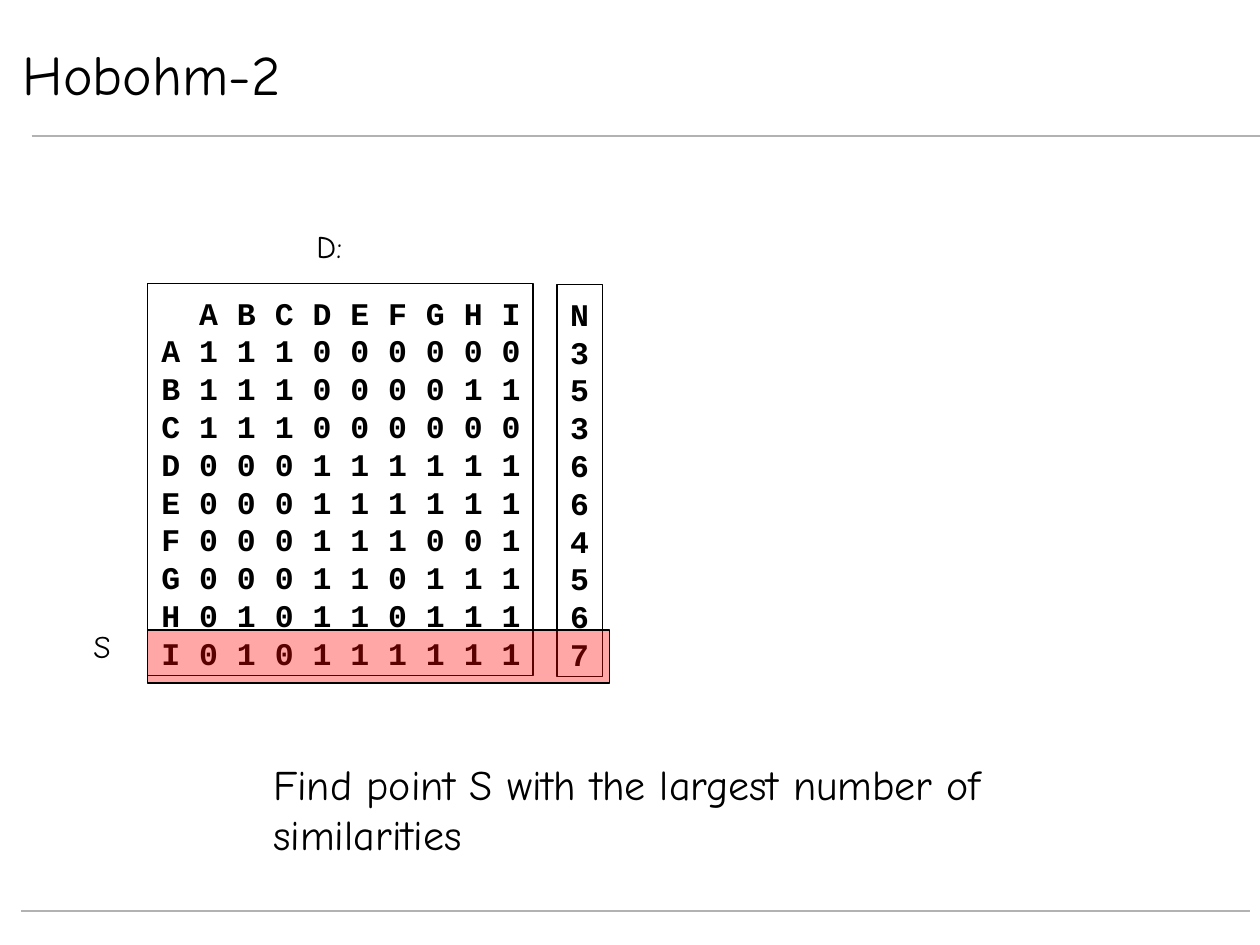
from lxml import etree
from pptx import Presentation
from pptx.dml.color import RGBColor
from pptx.enum.shapes import MSO_CONNECTOR, MSO_SHAPE
from pptx.enum.text import MSO_ANCHOR, MSO_AUTO_SIZE, PP_ALIGN
from pptx.oxml.ns import qn
from pptx.util import Inches, Pt

LINE, RECT = MSO_CONNECTOR.STRAIGHT, MSO_SHAPE.RECTANGLE
TOP, MIDDLE = MSO_ANCHOR.TOP, MSO_ANCHOR.MIDDLE
LEFT, CENTER, RIGHT = PP_ALIGN.LEFT, PP_ALIGN.CENTER, PP_ALIGN.RIGHT
NO_FIT = MSO_AUTO_SIZE.NONE
BLACK = RGBColor(0, 0, 0)
WHITE = RGBColor(0xFF, 0xFF, 0xFF)
GRAY = RGBColor(0xB2, 0xB2, 0xB2)
RED = RGBColor(0xFF, 0, 0)
SANS = {"name": "Comic Neue", "bold": False}
MONO = {"name": "Courier New", "bold": True, "size": Pt(18)}
ROW = 0.3

NAMES = "ABCDEFGHI"
SIMILAR = ["111000000", "111000011", "111000000", "000111111", "000111111",
           "000111001", "000110111", "010110111", "010111111"]


def write(sp, lines, style, align=LEFT, anchor=TOP, wrap=False, pitch=None):
    tf = sp.text_frame
    frame = {"word_wrap": wrap, "auto_size": NO_FIT, "vertical_anchor": anchor}
    for key, value in frame.items():
        setattr(tf, key, value)
    for i, line in enumerate(lines):
        p = tf.paragraphs[0] if i == 0 else tf.add_paragraph()
        p.alignment = align
        if pitch:
            p.line_spacing = pitch
        r = p.add_run()
        r.text = line
        for key, value in style.items():
            setattr(r.font, key, value)
        r.font.color.rgb = BLACK


def add_label(s, box, text, size, align=CENTER, wrap=False):
    sp = s.shapes.add_textbox(*map(Inches, box))
    write(sp, [text], {**SANS, "size": Pt(size)}, align, wrap=wrap)


def add_frame(s, box):
    sp = s.shapes.add_shape(RECT, *map(Inches, box))
    sp.shadow.inherit = False
    sp.fill.background()
    sp.line.color.rgb = BLACK
    sp.line.width = Pt(0.75)
    return sp


def add_rule(s, x, y, w):
    line = s.shapes.add_connector(LINE, *map(Inches, (x, y, x + w, y)))
    line.line.color.rgb = GRAY
    line.line.width = Pt(1.5)
    etree.SubElement(line._element.spPr, qn("a:effectLst"))


def add_title(s, box, text):
    sp = s.shapes.title
    sp.left, sp.top, sp.width, sp.height = map(Inches, box)
    sp.fill.solid()
    sp.fill.fore_color.rgb = WHITE
    sp.line.color.rgb = WHITE
    write(sp, [text], {**SANS, "size": Pt(32)}, anchor=MIDDLE, wrap=True)


def add_matrix(s, x, y, w, h):
    rows = [" ".join(NAMES)]
    rows += [" ".join(name + bits) for name, bits in zip(NAMES, SIMILAR)]
    counts = ["N"] + [str(bits.count("1")) for bits in SIMILAR]
    parts = [(x, y, 3.06, rows, RIGHT), (x + 3.25, y + 0.01, 0.36, counts, CENTER)]
    for left, top, width, lines, align in parts:
        sp = add_frame(s, (left, top, width, h))
        sp.text_frame.margin_top = Inches(0.08)
        write(sp, lines, MONO, align, pitch=Pt(ROW * 72))

    add_label(s, (x + 1.22, y - 0.5, 0.53, 0.4), "D: ", 18)
    bar = add_frame(s, (x, y + 2.75, w, 0.42))
    bar.fill.solid()
    bar.fill.fore_color.rgb = RED
    color = bar._element.spPr.find(qn("a:solidFill"))[0]
    etree.SubElement(color, qn("a:alpha"), val="35000")
    add_label(s, (x - 0.55, y + 2.68, 0.38, 0.4), "S", 18)


def main():
    prs = Presentation()
    prs.slide_width, prs.slide_height = Inches(10), Inches(7.5)
    s = prs.slides.add_slide(prs.slide_layouts[5])
    add_rule(s, 0.25, 1.08, 9.75)
    add_rule(s, 0.17, 7.23, 9.75)
    add_title(s, (0.08, 0.33, 7.83, 0.5), "Hobohm-2")
    add_matrix(s, 1.17, 2.25, 3.67, 3.11)
    add_label(s, (2.07, 5.97, 6.85, 0.9),
              "Find point S with the largest number of similarities", 24, LEFT, True)
    prs.save("out.pptx")


if __name__ == "__main__":
    main()
